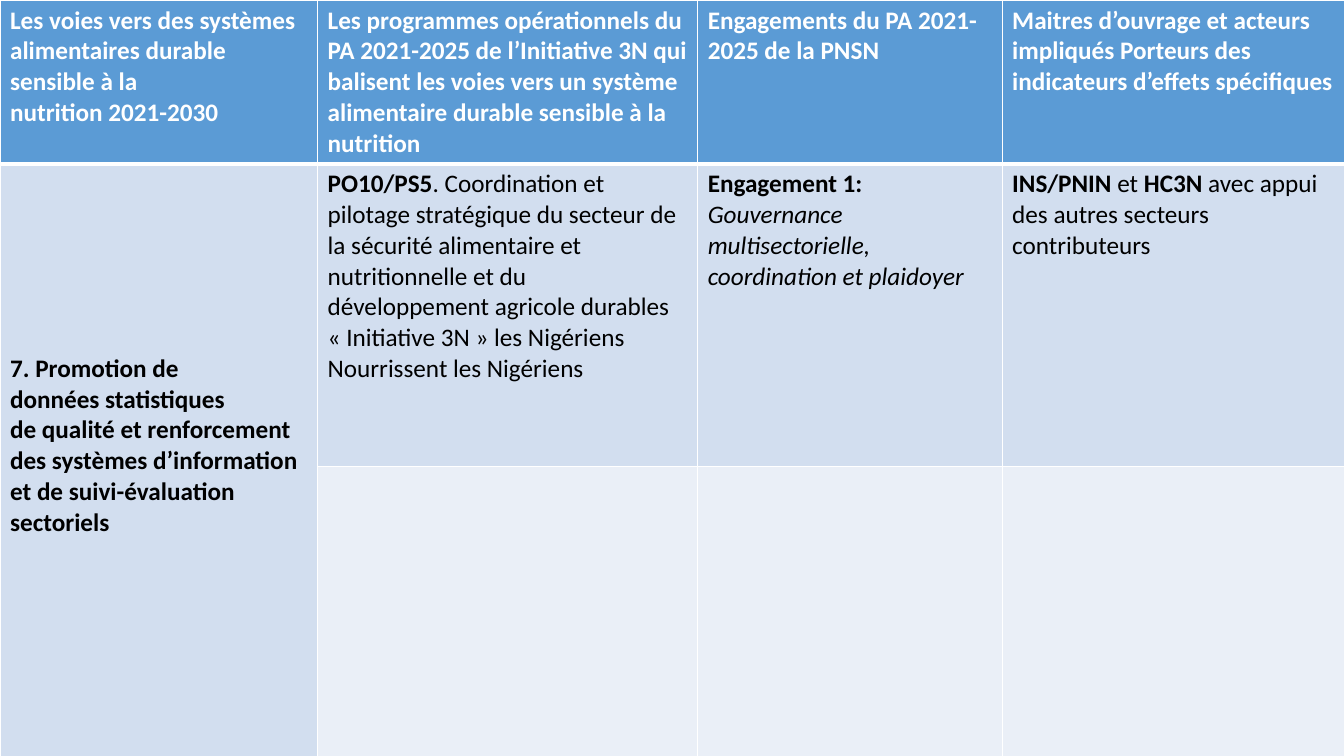
from dataclasses import dataclass

from lxml.etree import SubElement
from pptx import Presentation
from pptx.dml.color import RGBColor
from pptx.oxml.ns import qn
from pptx.util import Inches, Pt

WHITE = RGBColor(0xFF, 0xFF, 0xFF)
BLACK = RGBColor(0, 0, 0)
BLUE = RGBColor(0x5B, 0x9B, 0xD5)
PALE = RGBColor(0xD2, 0xDE, 0xEF)
LIGHT = RGBColor(0xEA, 0xEF, 0xF7)

WIDTHS = [3.15, 3.77, 3.02, 3.4]
HEIGHTS = [1.49, 3, 3]
FILLS = [BLUE, PALE, LIGHT]


@dataclass
class Span:
    text: str
    bold: bool = False
    italic: bool = False


Para = list[Span]

HEADS: list[list[str]] = [
    ["Les voies vers des systèmes alimentaires durable sensible à la",
     "nutrition 2021-2030"],
    ["Les programmes opérationnels du PA 2021-2025 de l’Initiative 3N qui "
     "balisent les voies vers un système alimentaire durable sensible à la "
     "nutrition"],
    ["Engagements du PA 2021-2025 de la PNSN"],
    ["Maitres d’ouvrage et acteurs impliqués Porteurs des indicateurs "
     "d’effets spécifiques"],
]

BODY: list[list[Para]] = [
    [[Span("7. Promotion de", True)],
     [Span("données statistiques", True)],
     [Span("de qualité et renforcement des systèmes d’information et de "
           "suivi-évaluation sectoriels", True)]],
    [[Span("PO10/PS5", True),
      Span(". Coordination et pilotage stratégique du secteur de la sécurité "
           "alimentaire et nutritionnelle et du")],
     [Span("développement agricole durables « Initiative 3N » les Nigériens "
           "Nourrissent les Nigériens")]],
    [[Span("Engagement 1: ", True),
      Span("Gouvernance multisectorielle, coordination et plaidoyer",
           italic=True)]],
    [[Span("INS/PNIN ", True), Span("et "), Span("HC3N", True),
      Span(" avec appui des autres secteurs contributeurs")]],
]


def write(cell, paras: list[Para], color: RGBColor) -> None:
    frame = cell.text_frame
    for i, para in enumerate(paras):
        line = frame.add_paragraph() if i else frame.paragraphs[0]
        for span in para:
            run = line.add_run()
            run.text = span.text
            font = run.font
            font.name, font.size = "Calibri", Pt(18)
            font.bold, font.italic = span.bold, span.italic
            font.color.rgb = color


def edge(cell, top: float, bottom: float) -> None:
    """Draw white borders; must run before the cell gets its fill."""
    props = cell._tc.get_or_add_tcPr()
    for side, width in zip("LRTB", (1, 1, top, bottom)):
        line = SubElement(props, qn(f"a:ln{side}"), w=str(Pt(width)))
        fill = SubElement(line, qn("a:solidFill"))
        SubElement(fill, qn("a:srgbClr"), val=str(WHITE))


def main() -> None:
    deck = Presentation()
    deck.slide_width, deck.slide_height = Inches(13.33), Inches(7.5)
    slide = deck.slides.add_slide(deck.slide_layouts[6])
    table = slide.shapes.add_table(
        len(HEIGHTS), len(WIDTHS), 0, 0,
        Inches(sum(WIDTHS)), Inches(sum(HEIGHTS))).table
    table.horz_banding = False

    for col, width in zip(table.columns, WIDTHS):
        col.width = Inches(width)
    for r, (height, fill) in enumerate(zip(HEIGHTS, FILLS)):
        table.rows[r].height = Inches(height)
        for c in range(len(WIDTHS)):
            cell = table.cell(r, c)
            edge(cell, 3 if r == 1 else 1, 3 if r == 0 else 1)
            cell.fill.solid()
            cell.fill.fore_color.rgb = PALE if r and c == 0 else fill

    for c, (head, body) in enumerate(zip(HEADS, BODY)):
        write(table.cell(0, c), [[Span(t, True)] for t in head], WHITE)
        write(table.cell(1, c), body, BLACK)

    theme = table.cell(1, 0)
    theme.merge(table.cell(2, 0))
    theme.margin_top = Inches(1.88)
    deck.save("out.pptx")


if __name__ == "__main__":
    main()
